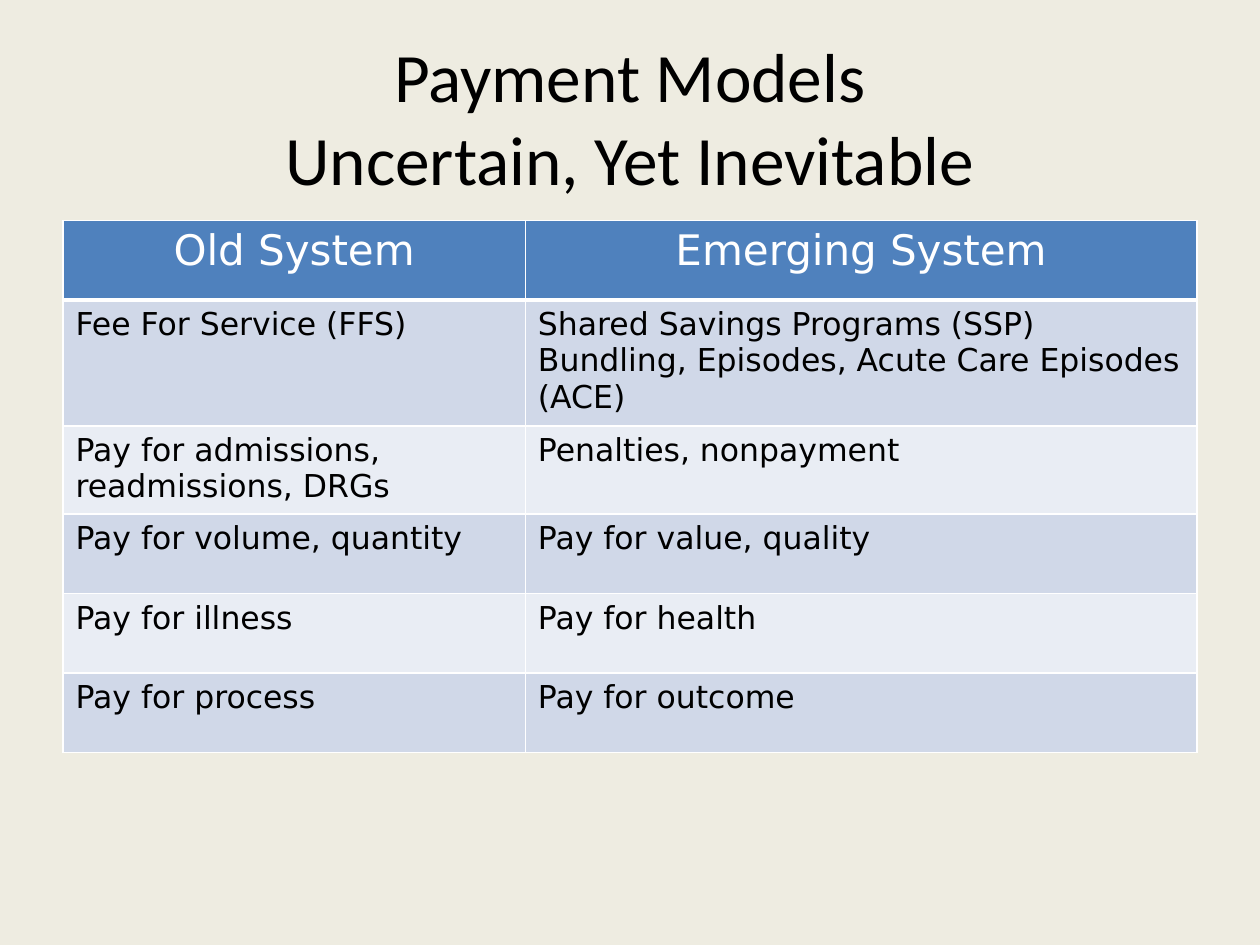
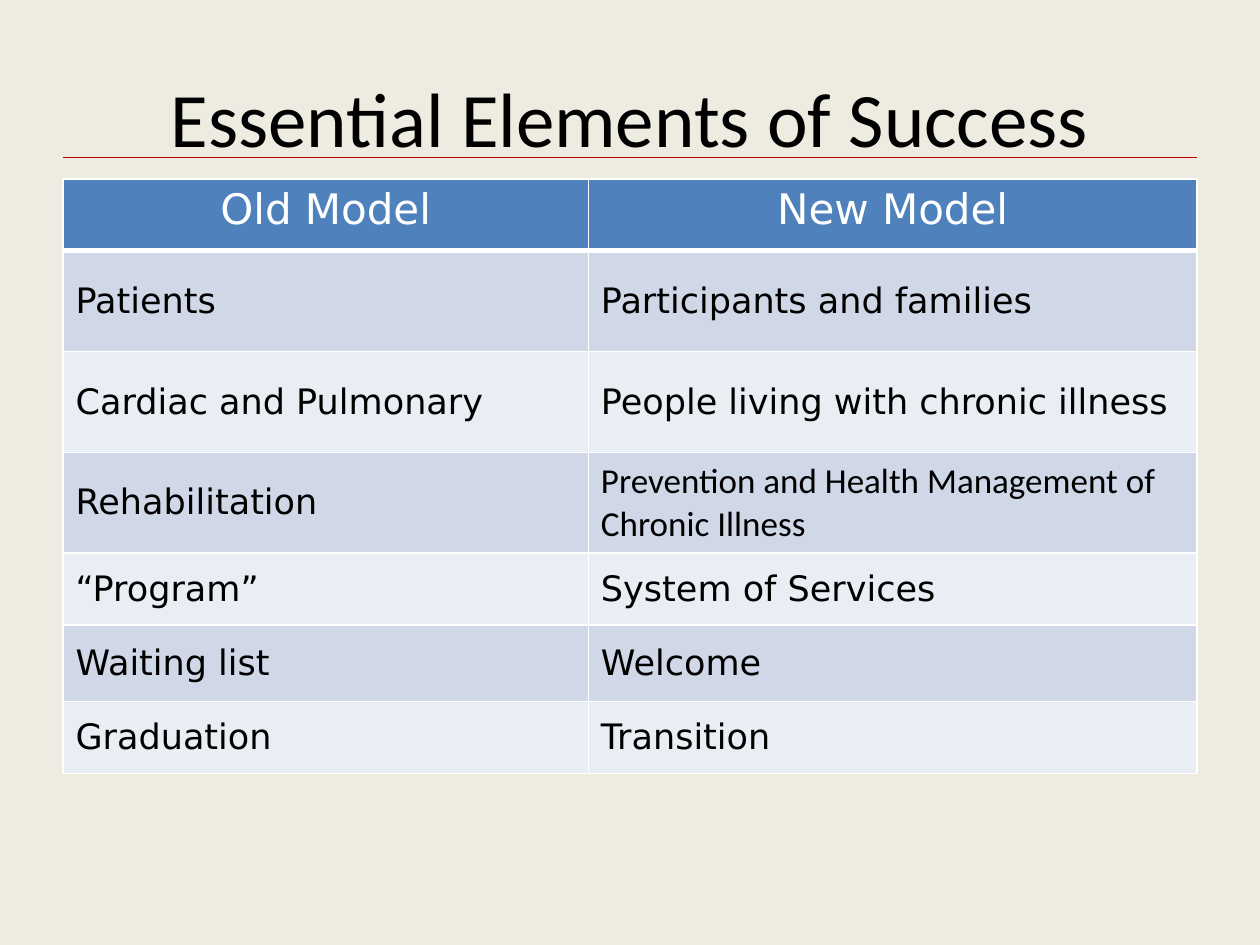
"""Build two slides that compare old and new care models in tables."""
from dataclasses import dataclass

from lxml import etree
from pptx import Presentation
from pptx.dml.color import RGBColor
from pptx.enum.shapes import MSO_CONNECTOR
from pptx.enum.text import MSO_ANCHOR, PP_ALIGN
from pptx.oxml.ns import qn
from pptx.util import Inches, Pt

TOP, MIDDLE = MSO_ANCHOR.TOP, MSO_ANCHOR.MIDDLE
LEFT, CENTER = PP_ALIGN.LEFT, PP_ALIGN.CENTER
STRAIGHT = MSO_CONNECTOR.STRAIGHT


@dataclass(frozen=True)
class Theme:
    background: str = "EEECE1"
    text: str = "000000"
    header: str = "4F81BD"
    header_text: str = "FFFFFF"
    border: str = "FFFFFF"
    bands: tuple = ("D0D8E8", "E9EDF4")
    rule: str = "C00000"
    title_font: str = "Calibri"
    body_font: str = "DejaVu Sans"
    header_size: float = 24
    border_width: float = 1
    header_border_width: float = 3
    rule_width: float = 0.75


THEME = Theme()
MARGIN, CONTENT_WIDTH = 0.5, 9
TITLE_TOP, TITLE_HEIGHT = 0.3, 1.25

SLIDES = [
    {
        "title": ["Payment Models", "Uncertain, Yet Inevitable"],
        "title_size": 39.6,
        "table_top": 1.75,
        "columns": [3.67, 5.33],
        "heights": [0.63, 0.87, 0.63, 0.63, 0.63, 0.63],
        "body_size": 18,
        "anchor": TOP,
        "rows": [
            ("Old System", "Emerging System"),
            ("Fee For Service (FFS)",
             "Shared Savings Programs (SSP)\nBundling, Episodes, Acute Care Episodes (ACE)"),
            ("Pay for admissions, readmissions, DRGs", "Penalties, nonpayment"),
            ("Pay for volume, quantity", "Pay for value, quality"),
            ("Pay for illness", "Pay for health"),
            ("Pay for process", "Pay for outcome"),
        ],
    },
    {
        "title": ["Essential Elements of Success"],
        "title_size": 44,
        "table_top": 1.42,
        "columns": [4.17, 4.83],
        "heights": [0.57, 0.8, 0.8, 0.8, 0.57, 0.61, 0.57],
        "body_size": 20,
        "anchor": MIDDLE,
        "rows": [
            ("Old Model", "New Model"),
            ("Patients", "Participants and families"),
            ("Cardiac and Pulmonary", "People living with chronic illness"),
            ("Rehabilitation", "Prevention and Health Management of Chronic Illness"),
            ("“Program”", "System of Services"),
            ("Waiting list", "Welcome"),
            ("Graduation", "Transition"),
        ],
        "title_font_cells": {(3, 1)},
        "rule_top": 1.25,
    },
]


def add_span(para, text, font, size, color):
    span = para.add_run()
    span.text = text
    span.font.name = font
    span.font.size = Pt(size)
    span.font.color.rgb = RGBColor.from_string(color)


def add_title(page, lines, size):
    box = page.shapes.add_textbox(Inches(MARGIN), Inches(TITLE_TOP),
                                  Inches(CONTENT_WIDTH), Inches(TITLE_HEIGHT))
    frame = box.text_frame
    frame.word_wrap = True
    frame.vertical_anchor = MIDDLE
    para = frame.paragraphs[0]
    para.alignment = CENTER
    for index, line in enumerate(lines):
        if index:
            para.add_line_break()
        add_span(para, line, THEME.title_font, size, THEME.text)


def set_borders(cell, bottom_width):
    properties = cell._tc.get_or_add_tcPr()
    widths = {"a:lnL": THEME.border_width, "a:lnR": THEME.border_width,
              "a:lnT": THEME.border_width, "a:lnB": bottom_width}
    for index, (side, width) in enumerate(widths.items()):
        border = etree.Element(qn(side), w=str(Pt(width)))
        fill = etree.SubElement(border, qn("a:solidFill"))
        etree.SubElement(fill, qn("a:srgbClr"), val=THEME.border)
        properties.insert(index, border)


def fill_cell(cell, text, fill, anchor, alignment, font, size, color, bottom_width):
    cell.fill.solid()
    cell.fill.fore_color.rgb = RGBColor.from_string(fill)
    cell.vertical_anchor = anchor
    set_borders(cell, bottom_width)
    frame = cell.text_frame
    for index, line in enumerate(text.split("\n")):
        para = frame.add_paragraph() if index else frame.paragraphs[0]
        para.alignment = alignment
        add_span(para, line, font, size, color)


def add_comparison(page, content):
    rows, columns, heights = content["rows"], content["columns"], content["heights"]
    table = page.shapes.add_table(
        len(rows), len(columns), Inches(MARGIN), Inches(content["table_top"]),
        Inches(CONTENT_WIDTH), Inches(sum(heights))).table
    for column, width in zip(table.columns, columns):
        column.width = Inches(width)
    for row, height in zip(table.rows, heights):
        row.height = Inches(height)
    special_cells = content.get("title_font_cells", ())
    for r, texts in enumerate(rows):
        for c, text in enumerate(texts):
            cell = table.cell(r, c)
            if r == 0:
                fill_cell(cell, text, THEME.header, TOP, CENTER, THEME.body_font,
                          THEME.header_size, THEME.header_text, THEME.header_border_width)
            else:
                font = THEME.title_font if (r, c) in special_cells else THEME.body_font
                fill_cell(cell, text, THEME.bands[(r - 1) % 2], content["anchor"], LEFT,
                          font, content["body_size"], THEME.text, THEME.border_width)


def add_rule(page, top):
    rule = page.shapes.add_connector(STRAIGHT, Inches(MARGIN), Inches(top),
                                     Inches(MARGIN + CONTENT_WIDTH), Inches(top))
    rule.line.color.rgb = RGBColor.from_string(THEME.rule)
    rule.line.width = Pt(THEME.rule_width)
    etree.SubElement(rule._element.spPr, qn("a:effectLst"))


def main():
    deck = Presentation()
    deck.slide_width, deck.slide_height = Inches(10), Inches(7.5)
    for content in SLIDES:
        page = deck.slides.add_slide(deck.slide_layouts[6])
        page.background.fill.solid()
        page.background.fill.fore_color.rgb = RGBColor.from_string(THEME.background)
        add_title(page, content["title"], content["title_size"])
        add_comparison(page, content)
        if "rule_top" in content:
            add_rule(page, content["rule_top"])
    deck.save("out.pptx")


if __name__ == "__main__":
    main()
